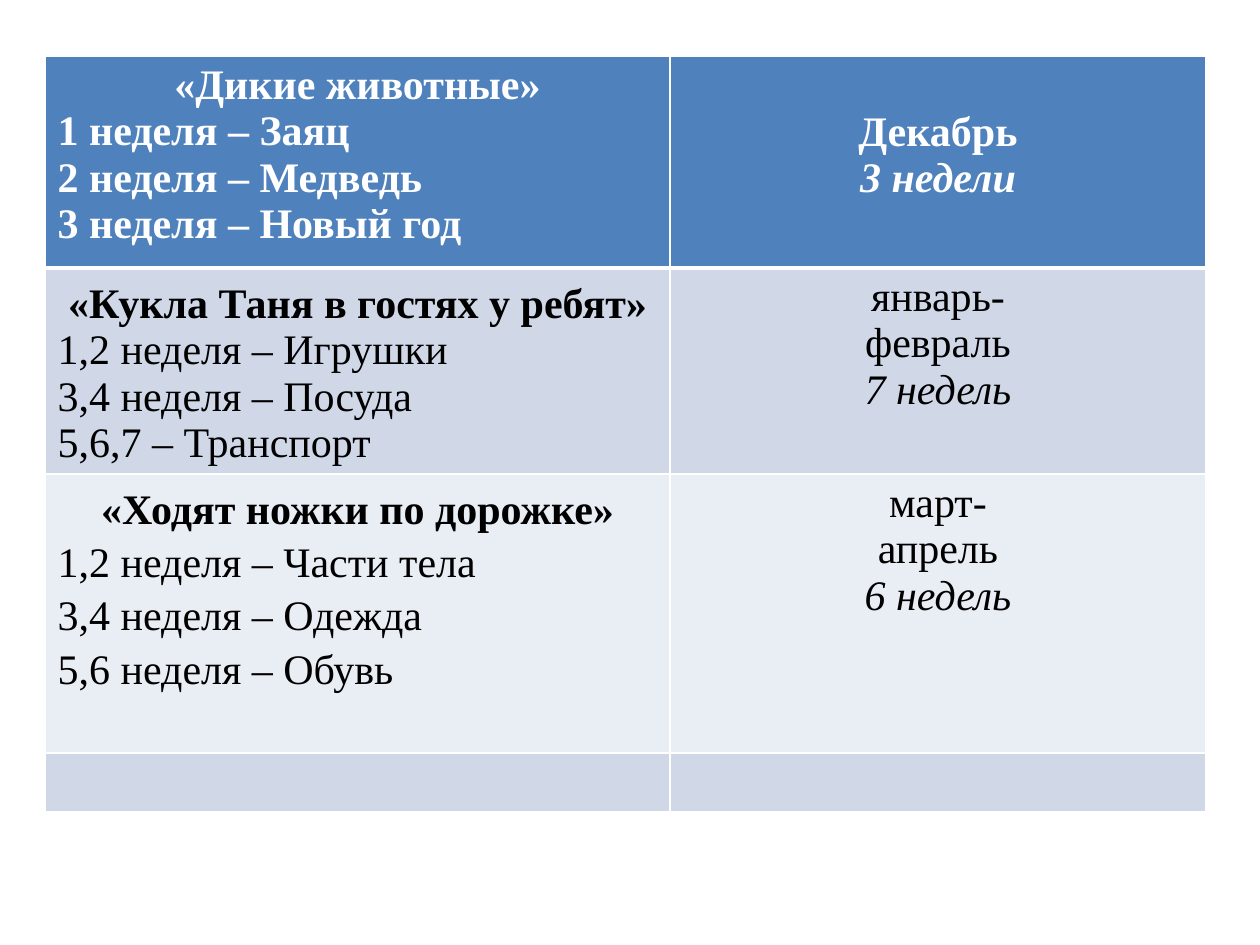
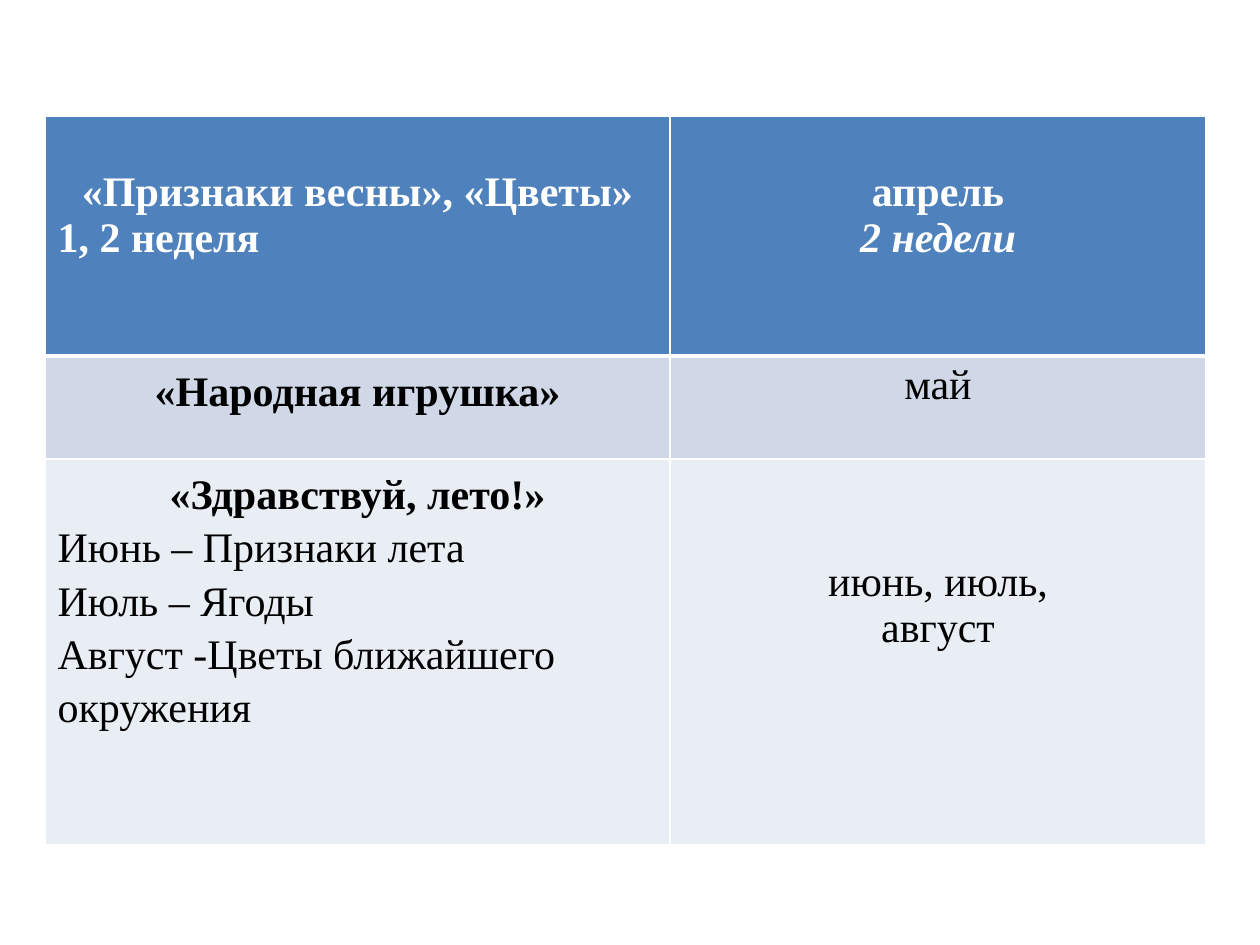
from dataclasses import dataclass

from lxml.etree import SubElement
from pptx import Presentation
from pptx.dml.color import RGBColor
from pptx.enum.text import PP_ALIGN
from pptx.oxml.ns import qn
from pptx.util import Emu, Pt

EMU_PER_PX = 914400 / 126
FONT, SIZE = "Times New Roman", 24
COLORS = {"header": "4F81BD", "band": "D0D8E8", "light": "E9EDF4",
          "white": "FFFFFF", "text": "000000"}
TABLE_LEFT = 45
COLUMN_WIDTHS = (625, 536)
CELL_MARGIN = 6
LINE_HEIGHT = 47
LOOSE = 1.15


@dataclass
class Topic:
    """One table row: a theme with its weeks, and the period it takes."""
    height: int
    title: str = ""
    weeks: tuple = ()
    months: tuple = ()
    duration: str = ""
    title_spacing: float = LOOSE
    week_spacing: float = 1.0
    title_drop: int = 0
    month_drop: int = 0


DECEMBER_TO_APRIL = (
    Topic(212, "«Дикие животные»",
          ("1 неделя – Заяц", "2 неделя – Медведь", "3 неделя – Новый год"),
          ("Декабрь",), "3 недели", title_spacing=1.0, month_drop=1),
    Topic(206, "«Кукла Таня в гостях у ребят»",
          ("1,2 неделя – Игрушки", "3,4 неделя – Посуда", "5,6,7 – Транспорт"),
          ("январь-", "февраль"), "7 недель"),
    Topic(279, "«Ходят ножки по дорожке»",
          ("1,2 неделя – Части тела", "3,4 неделя – Одежда", "5,6 неделя – Обувь"),
          ("март-", "апрель"), "6 недель", week_spacing=LOOSE),
    Topic(59),
)
APRIL_TO_AUGUST = (
    Topic(240, "«Признаки весны», «Цветы»", ("1, 2 неделя",),
          ("апрель",), "2 недели", title_spacing=1.0, title_drop=1, month_drop=1),
    Topic(103, "«Народная игрушка»", months=("май",)),
    Topic(386, "«Здравствуй, лето!»",
          ("Июнь – Признаки лета", "Июль – Ягоды", "Август -Цветы ближайшего окружения"),
          ("июнь, июль,", "август"), week_spacing=LOOSE, month_drop=2),
)


def px(length):
    """Turn pixels into EMU."""
    return Emu(round(length * EMU_PER_PX))


def add_border(cell, side, points):
    """Draw a white line on one side of a cell."""
    line = SubElement(cell._tc.get_or_add_tcPr(), qn(f"a:ln{side}"), w=str(Pt(points)))
    fill = SubElement(line, qn("a:solidFill"))
    SubElement(fill, qn("a:srgbClr"), val=COLORS["white"])


def style_cell(cell, row, drop):
    """Set the borders, fill and top margin that follow from the row."""
    top, bottom = (3 if row == 1 else 1), (3 if row == 0 else 1)
    for side, points in (("L", 1), ("R", 1), ("T", top), ("B", bottom)):
        add_border(cell, side, points)
    name = "header" if row == 0 else ("light", "band")[row % 2]
    cell.fill.solid()
    cell.fill.fore_color.rgb = RGBColor.from_string(COLORS[name])
    cell.margin_top = px(CELL_MARGIN + drop * LINE_HEIGHT)


def write_lines(cell, lines, color):
    """Write (text, centered, bold, italic, spacing) lines into a cell."""
    for index, (text, centered, bold, italic, spacing) in enumerate(lines):
        frame = cell.text_frame
        para = frame.paragraphs[0] if index == 0 else frame.add_paragraph()
        para.alignment = PP_ALIGN.CENTER if centered else PP_ALIGN.LEFT
        para.line_spacing = spacing
        span = para.add_run()
        span.text = text
        span.font.name, span.font.size = FONT, Pt(SIZE)
        span.font.bold, span.font.italic = bold, italic
        span.font.color.rgb = RGBColor.from_string(color)


def fill_row(table, row, topic):
    """Fill one table row from a topic."""
    header = row == 0
    color = COLORS["white" if header else "text"]
    theme = [(topic.title, True, True, False, topic.title_spacing)] if topic.title else []
    theme += [(week, False, header, False, topic.week_spacing) for week in topic.weeks]
    period = [(month, True, header, False, 1.0) for month in topic.months]
    if topic.duration:
        period.append((topic.duration, True, header, True, 1.0))
    table.rows[row].height = px(topic.height)
    columns = ((theme, topic.title_drop), (period, topic.month_drop))
    for column, (lines, drop) in enumerate(columns):
        cell = table.cell(row, column)
        style_cell(cell, row, drop)
        write_lines(cell, lines, color)


def add_plan(deck, top, topics):
    """Add a page with one table of topics."""
    page = deck.slides.add_slide(deck.slide_layouts[6])
    height = sum(topic.height for topic in topics)
    table = page.shapes.add_table(len(topics), len(COLUMN_WIDTHS), px(TABLE_LEFT), px(top),
                                  px(sum(COLUMN_WIDTHS)), px(height)).table
    for column, width in zip(table.columns, COLUMN_WIDTHS):
        column.width = px(width)
    for row, topic in enumerate(topics):
        fill_row(table, row, topic)


def main():
    """Build and save the deck."""
    deck = Presentation()
    deck.slide_width, deck.slide_height = px(1260), px(945)
    add_plan(deck, 56, DECEMBER_TO_APRIL)
    add_plan(deck, 116, APRIL_TO_AUGUST)
    deck.save("out.pptx")


if __name__ == "__main__":
    main()
